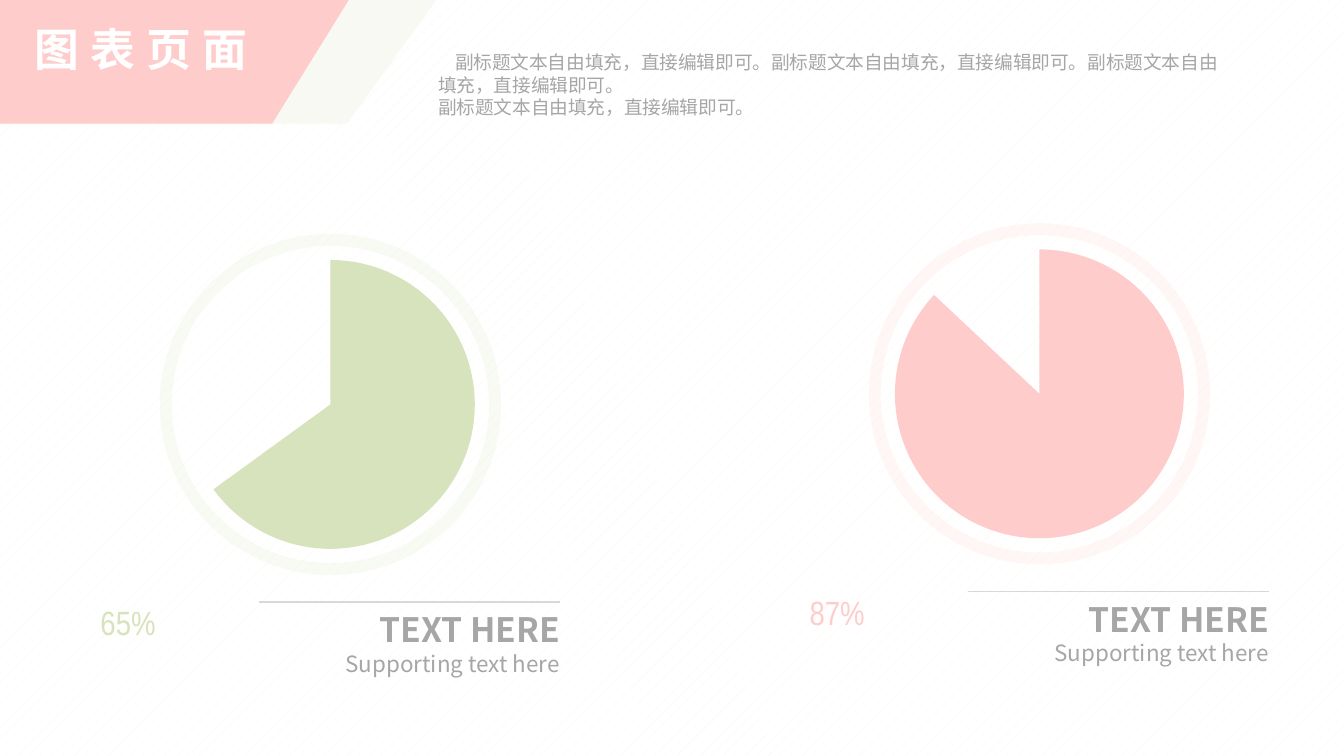
from lxml.etree import SubElement
from pptx import Presentation
from pptx.dml.color import RGBColor
from pptx.enum.dml import MSO_PATTERN
from pptx.enum.shapes import MSO_CONNECTOR, MSO_SHAPE
from pptx.enum.text import MSO_ANCHOR, MSO_AUTO_SIZE, PP_ALIGN
from pptx.oxml.ns import qn
from pptx.util import Cm, Pt

SANS, NARROW = "Noto Sans CJK SC", "Arial Narrow"
GREEN, PINK, CREAM = "D7E3BC", "FFCCCC", "F7F9F2"
GREY, RULE, WHITE = "A6A6A6", "D8D8D8", "FFFFFF"

TITLE = "图表页面"
SUBTITLE = [
    "副标题文本自由填充，直接编辑即可。副标题文本自由填充，直接编辑即可。副标题文本自由填充，直接编辑即可。",
    "副标题文本自由填充，直接编辑即可。",
]
DIALS = [
    {"percent": 65, "color": GREEN, "left": 3.02, "top": 4.42},
    {"percent": 87, "color": PINK, "left": 16.42, "top": 4.22},
]
CAPTIONS = [("TEXT HERE", 18, True, 7.11), ("Supporting text here", 12, False, 7.75)]
BANNERS = [(-1.57, 10.16, CREAM), (-1.85, 8.74, PINK)]
RING, WEDGE = 6.45, 5.46
START, DEGREE = 270, 0.6


def hex_color(value):
    """Turn a hex string into a colour."""
    return RGBColor.from_string(value)


def place(box, left, top, width, height):
    """Set the position and size of a box in centimetres."""
    box.left, box.top, box.width, box.height = map(Cm, (left, top, width, height))


def write(box, *lines, size, color, font=SANS, bold=False, align=PP_ALIGN.LEFT,
          anchor=MSO_ANCHOR.TOP, wrap=False, insets=(0, 0, 0, 0), spacing=None):
    """Fill a box with one formatted paragraph per line."""
    frame = box.text_frame
    frame.auto_size = MSO_AUTO_SIZE.NONE
    frame.word_wrap, frame.vertical_anchor = wrap, anchor
    (frame.margin_left, frame.margin_top,
     frame.margin_right, frame.margin_bottom) = map(Cm, insets)
    for index, line in enumerate(lines):
        para = frame.add_paragraph() if index else frame.paragraphs[0]
        para.alignment = align
        span = para.add_run()
        span.text = line
        span.font.size, span.font.bold, span.font.name = Pt(size), bold, font
        span.font.color.rgb = hex_color(color)
        properties = span.font._element
        SubElement(properties, qn("a:ea"), typeface=font)
        if spacing:
            properties.set("spc", str(spacing * 100))


def add_text(shapes, left, top, width, height, *lines, **style):
    """Add a text box with formatted lines."""
    box = shapes.add_textbox(*map(Cm, (left, top, width, height)))
    write(box, *lines, **style)


def add_shape(shapes, kind, left, top, width, height, color, adjust=(), opacity=None):
    """Add a plain filled shape without an outline."""
    shape = shapes.add_shape(kind, *map(Cm, (left, top, width, height)))
    shape.shadow.inherit = False
    shape.fill.solid()
    shape.fill.fore_color.rgb = hex_color(color)
    shape.line.fill.background()
    for index, value in enumerate(adjust):
        shape.adjustments[index] = value
    if opacity:
        tint = shape._element.spPr.find(qn("a:solidFill"))[0]
        SubElement(tint, qn("a:alpha"), val=str(opacity * 1000))


def add_dial(page, percent, color, left, top):
    """Add a grouped percentage dial with its label, rule and captions."""
    shapes = page.shapes.add_group_shape().shapes
    gap = (RING - WEDGE) / 2
    end = (START + 3.6 * percent) % 360
    add_shape(shapes, MSO_SHAPE.DONUT, left, top, RING, RING, color, [0.035], opacity=16)
    add_shape(shapes, MSO_SHAPE.PIE, left + gap, top + gap, WEDGE, WEDGE, color,
              [START * DEGREE, end * DEGREE])
    add_text(shapes, left - 1.12, top + 6.96, 2.21, 1.68, f"{percent}%",
             size=18, color=color, font=NARROW)
    start, width, level = left + 1.88, 5.68, top + 6.96
    rule = shapes.add_connector(MSO_CONNECTOR.STRAIGHT,
                                *map(Cm, (start + width, level, start, level)))
    rule.line.color.rgb, rule.line.width = hex_color(RULE), Pt(1)
    SubElement(rule._element.spPr, qn("a:effectLst"))
    for text, size, bold, drop in CAPTIONS:
        add_text(shapes, start, top + drop, width, 0.74, text, size=size, color=GREY,
                 bold=bold, align=PP_ALIGN.RIGHT, anchor=MSO_ANCHOR.MIDDLE)


def main():
    """Build the slide and save the deck."""
    deck = Presentation()
    deck.slide_width, deck.slide_height = Cm(25.4), Cm(14.29)
    page = deck.slides.add_slide(deck.slide_layouts[5])
    backdrop = page.background.fill
    backdrop.patterned()
    backdrop.pattern = MSO_PATTERN.DASHED_UPWARD_DIAGONAL
    backdrop.fore_color.rgb, backdrop.back_color.rgb = hex_color("FEF7F0"), hex_color(WHITE)

    for dial in DIALS:
        add_dial(page, **dial)
    for left, width, color in BANNERS:
        add_shape(page.shapes, MSO_SHAPE.FLOWCHART_DATA, left, -0.48, width, 2.82, color)

    title = page.shapes.title
    place(title, 0.41, 0.28, 4.78, 1.27)
    write(title, TITLE, size=24, color=WHITE, bold=True, align=PP_ALIGN.JUSTIFY,
          insets=(0.25, 0.13, 0.25, 0.13), spacing=6)
    page.shapes._spTree.append(title._element)

    add_text(page.shapes, 8.03, 0.94, 15.72, 1.73, *SUBTITLE, size=10, color=GREY,
             wrap=True, insets=(0.25, 0.03, 0.5, 0))
    opening = page.shapes[-1].text_frame.paragraphs[0]
    opening._p.get_or_add_pPr().set("indent", str(Cm(0.32)))
    deck.save("out.pptx")


if __name__ == "__main__":
    main()
